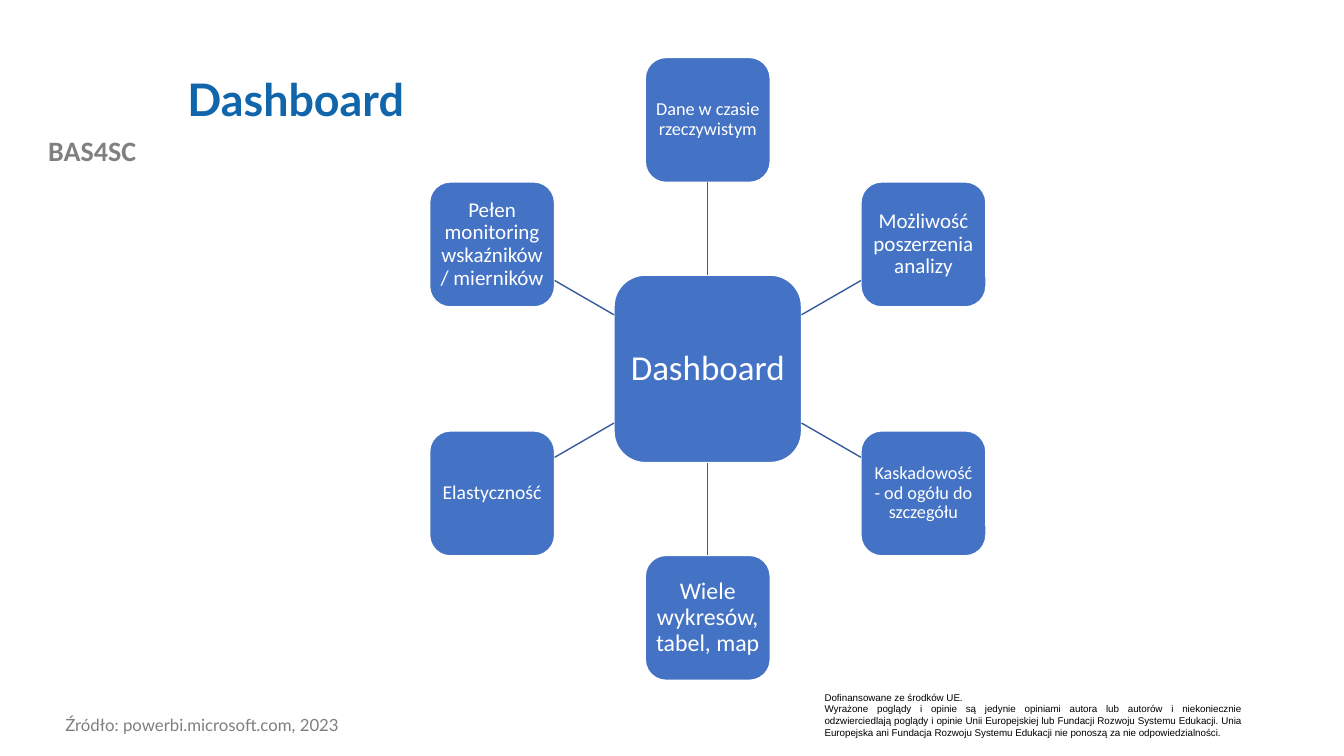
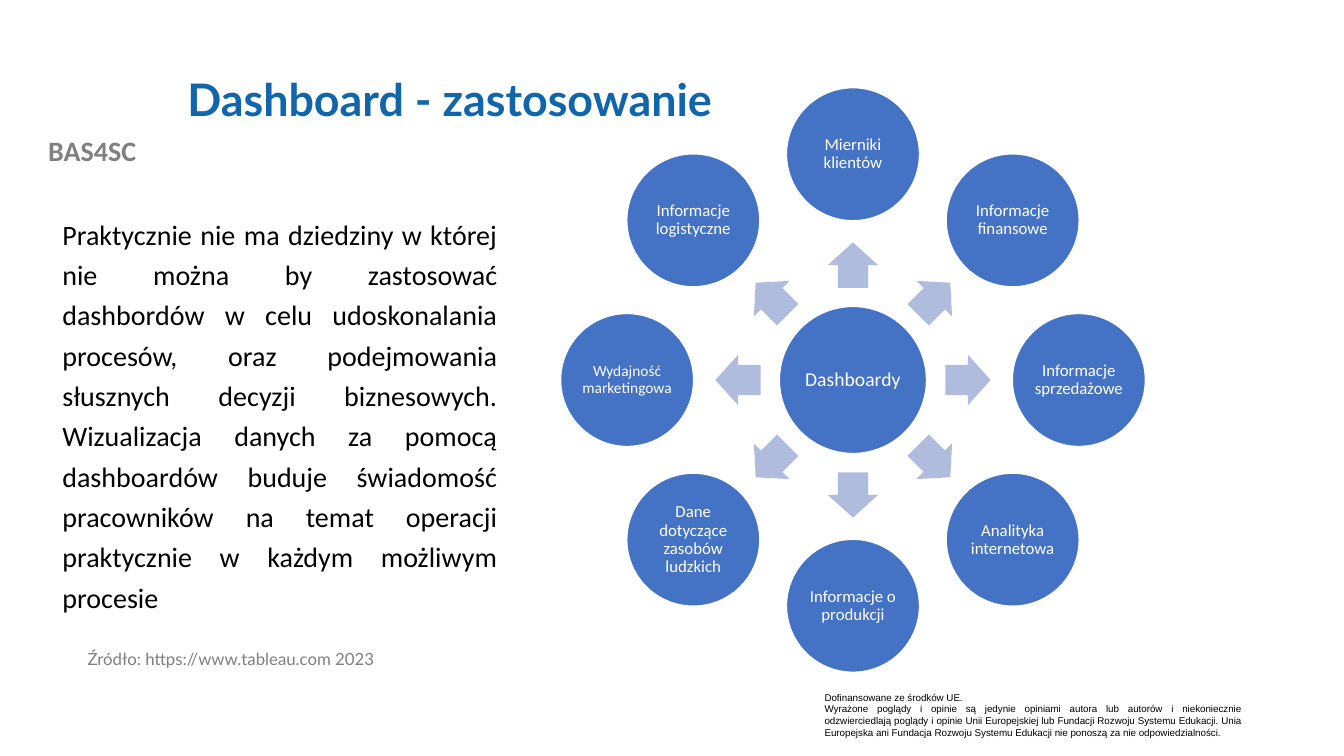
from math import sin, cos, radians
from lxml.etree import SubElement
from pptx import Presentation
from pptx.dml.color import RGBColor
from pptx.enum.shapes import MSO_SHAPE, MSO_CONNECTOR
from pptx.enum.text import MSO_ANCHOR, PP_ALIGN
from pptx.oxml.ns import qn
from pptx.util import Inches, Pt

HEX = {"title": "1065AB", "label": "808080", "source": "7F7F7F", "ink": "000000",
       "white": "FFFFFF", "node": "4472C4", "spoke": "365B9D", "arrow": "B0BCDE"}

# Format of each kind of text
STYLES = {
    "title": dict(name="Lato", size=32, bold=True, color="title", line_spacing=0.9),
    "label": dict(name="Calibri", size=20, bold=True, color="label",
                  alignment=PP_ALIGN.CENTER),
    "foot": dict(name="Arial", size=7, color="ink", alignment=PP_ALIGN.JUSTIFY),
    "source": dict(name="Lato", size=12, color="source", line_spacing=0.9),
    "body": dict(name="Calibri", size=20, color="ink", line_spacing=1.2,
                 alignment=PP_ALIGN.JUSTIFY),
    "node": dict(name="Calibri", color="white", line_spacing=0.9,
                 alignment=PP_ALIGN.CENTER),
}

LABEL = "BAS4SC"
FOOT = [
    "Dofinansowane ze środków UE.",
    "Wyrażone poglądy i opinie są jedynie opiniami autora lub autorów i niekoniecznie "
    "odzwierciedlają poglądy i opinie Unii Europejskiej lub Fundacji Rozwoju Systemu "
    "Edukacji. Unia Europejska ani Fundacja Rozwoju Systemu Edukacji nie ponoszą za nie "
    "odpowiedzialności.",
]
BODY = (
    "Praktycznie nie ma dziedziny w której nie można by zastosować dashbordów w celu "
    "udoskonalania procesów, oraz podejmowania słusznych decyzji biznesowych. "
    "Wizualizacja danych za pomocą dashboardów buduje świadomość pracowników na temat "
    "operacji praktycznie w każdym możliwym procesie"
)

# Nodes are (text, size), clockwise from the top
TRAITS = dict(
    shape=MSO_SHAPE.ROUNDED_RECTANGLE, mid=(7.02, 3.66), radius=2.47,
    hub=("Dashboard", 25), hub_side=1.86, side=1.24, inset=0.04,
    nodes=[("Dane w czasie rzeczywistym", 13), ("Możliwość poszerzenia analizy", 15),
           ("Kaskadowość - od ogółu do szczegółu", 13),
           ("Wiele wykresów, tabel, map", 17), ("Elastyczność", 14),
           ("Pełen monitoring wskaźników / mierników", 15)],
)
USES = dict(
    shape=MSO_SHAPE.OVAL, mid=(8.46, 3.77), radius=2.24,
    hub=("Dashboardy", 14), hub_side=1.46, side=1.32, inset=0.02,
    nodes=[("Mierniki klientów", 12), ("Informacje finansowe", 12),
           ("Informacje sprzedażowe", 12), ("Analityka internetowa", 12),
           ("Informacje o produkcji", 12), ("Dane dotyczące zasobów ludzkich", 12),
           ("Wydajność marketingowa", 11), ("Informacje logistyczne", 12)],
)
ARROW = dict(radius=1.14, size=(0.45, 0.5))


def color(key):
    return RGBColor.from_string(HEX[key])


def write(frame, lines, style, **extra):
    frame.word_wrap = True
    for i, line in enumerate(lines):
        para = frame.paragraphs[0] if i == 0 else frame.add_paragraph()
        run = para.add_run()
        run.text = line
        for key, value in {**STYLES[style], **extra}.items():
            if key == "color":
                run.font.color.rgb = color(value)
            elif key == "size":
                run.font.size = Pt(value)
            else:
                setattr(para if hasattr(para, key) else run.font, key, value)


def add_text(slide, box, lines, style, anchor=MSO_ANCHOR.TOP):
    frame = slide.shapes.add_textbox(*map(Inches, box)).text_frame
    frame.vertical_anchor = anchor
    write(frame, lines, style)


def add_solid(slide, kind, mid, size, fill, edge=None):
    """Place a filled shape by its middle."""
    left, top = (m - s / 2 for m, s in zip(mid, size))
    shape = slide.shapes.add_shape(kind, *map(Inches, (left, top, *size)))
    shape.shadow.inherit = False
    shape.fill.solid()
    shape.fill.fore_color.rgb = color(fill)
    if edge:
        shape.line.color.rgb = color(edge)
        shape.line.width = Pt(1)
    else:
        shape.line.fill.background()
    return shape


def add_node(slide, ring, mid, side, node):
    shape = add_solid(slide, ring["shape"], mid, (side, side), "node", "white")
    frame = shape.text_frame
    frame.vertical_anchor = MSO_ANCHOR.MIDDLE
    for edge in ("left", "right", "top", "bottom"):
        setattr(frame, f"margin_{edge}", Inches(ring["inset"]))
    text, size = node
    write(frame, [text], "node", size=size)
    return shape


def polar(mid, radius, angle):
    """Point at an angle in degrees, clockwise from the top."""
    turn = radians(angle)
    return mid[0] + radius * sin(turn), mid[1] - radius * cos(turn)


def add_spoke(slide, ring, angle, hub, node):
    """Line from the edge of the hub to the edge of a node."""
    reach = max(abs(sin(radians(angle))), abs(cos(radians(angle))))
    start = polar(ring["mid"], ring["hub_side"] / 2 / reach, angle)
    end = polar(ring["mid"], ring["radius"] - ring["side"] / 2 / reach, angle)
    line = slide.shapes.add_connector(MSO_CONNECTOR.STRAIGHT, *map(Inches, start + end))
    line.line.color.rgb = color("spoke")
    line.line.width = Pt(1)
    SubElement(line._element.spPr, qn("a:effectLst"))
    sites = {0: (0, 2), 180: (2, 0)}.get(angle)
    if sites:
        line.begin_connect(hub, sites[0])
        line.end_connect(node, sites[1])


def add_arrow(slide, ring, angle, hub, node):
    mid = polar(ring["mid"], ARROW["radius"], angle)
    arrow = add_solid(slide, MSO_SHAPE.RIGHT_ARROW, mid, ARROW["size"], "arrow")
    arrow.adjustments[0], arrow.adjustments[1] = 0.6, 0.5
    arrow.rotation = (angle - 90) % 360


def add_ring(slide, ring, link):
    hub = add_node(slide, ring, ring["mid"], ring["hub_side"], ring["hub"])
    step = 360 // len(ring["nodes"])
    for i, item in enumerate(ring["nodes"]):
        spot = polar(ring["mid"], ring["radius"], i * step)
        node = add_node(slide, ring, spot, ring["side"], item)
        link(slide, ring, i * step, hub, node)


def add_page(deck, title):
    """Blank slide with the shared label, footer and title."""
    slide = deck.slides.add_slide(deck.slide_layouts[6])
    add_text(slide, (0, 1.28, 1.83, 0.44), [LABEL], "label")
    add_text(slide, (8.08, 6.81, 4.33, 0.57), FOOT, "foot")
    add_text(slide, (1.76, 0.4, 10.66, 1.22), [title], "title", MSO_ANCHOR.MIDDLE)
    return slide


def main():
    deck = Presentation()
    deck.slide_width, deck.slide_height = Inches(13.33), Inches(7.5)

    slide = add_page(deck, "Dashboard")
    add_ring(slide, TRAITS, add_spoke)
    add_text(slide, (0.55, 7.06, 5.27, 0.34),
             ["Źródło: powerbi.microsoft.com, 2023"], "source")

    slide = add_page(deck, "Dashboard - zastosowanie")
    add_text(slide, (0.77, 6.41, 5.01, 0.52),
             ["Źródło: https://www.tableau.com 2023"], "source")
    add_ring(slide, USES, add_arrow)
    add_text(slide, (0.52, 2.04, 4.51, 4.11), [BODY], "body")

    deck.save("out.pptx")


if __name__ == "__main__":
    main()
